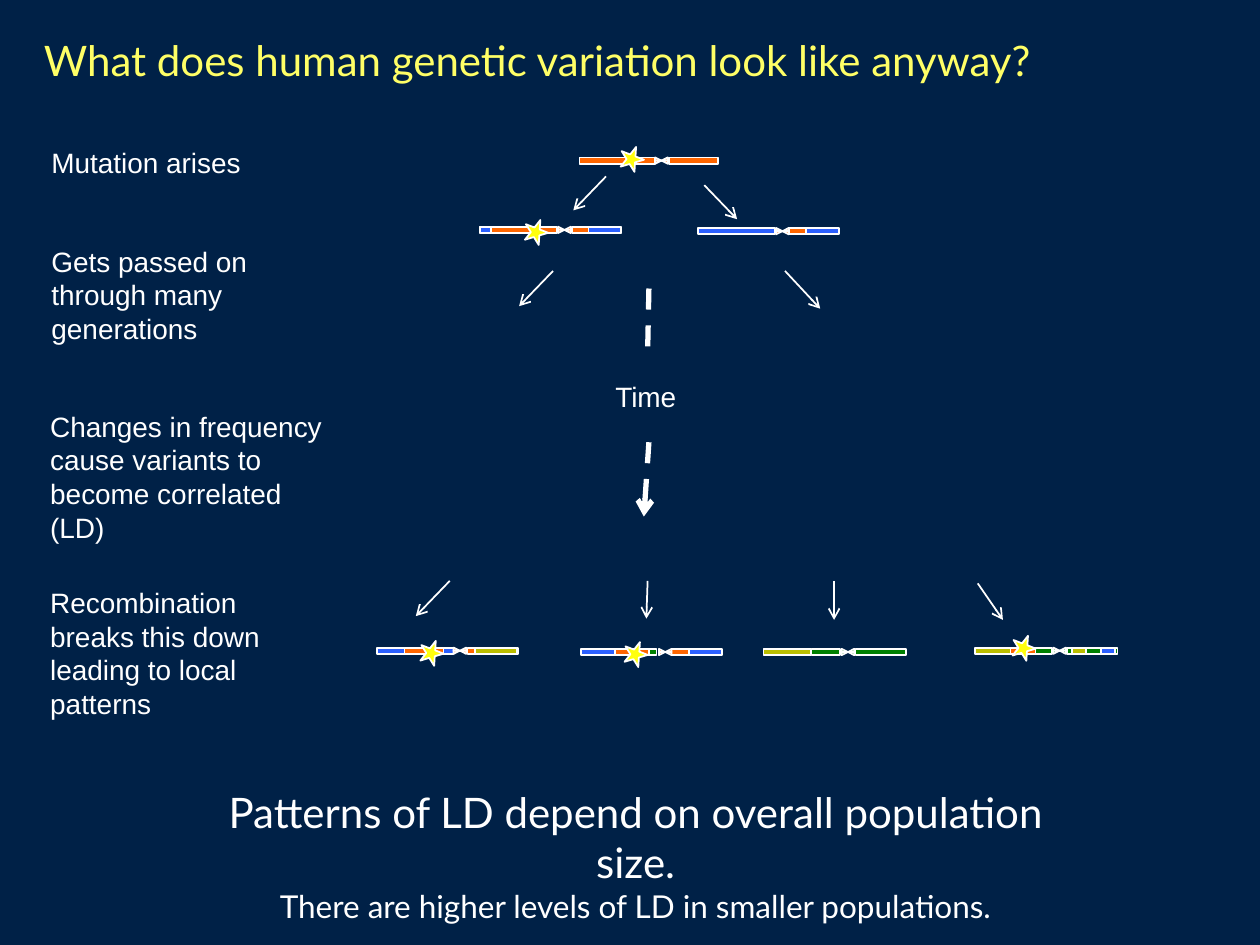
from lxml import etree
from pptx import Presentation
from pptx.dml.color import RGBColor
from pptx.enum.dml import MSO_LINE
from pptx.enum.shapes import MSO_CONNECTOR, MSO_SHAPE
from pptx.enum.text import MSO_ANCHOR, PP_ALIGN
from pptx.oxml.ns import qn
from pptx.util import Inches, Pt

RECT, TRIANGLE, STAR = MSO_SHAPE.RECTANGLE, MSO_SHAPE.RIGHT_TRIANGLE, MSO_SHAPE.STAR_5_POINT
STRAIGHT, DASH = MSO_CONNECTOR.STRAIGHT, MSO_LINE.DASH
LEFT, CENTER = PP_ALIGN.LEFT, PP_ALIGN.CENTER
TOP, BOTTOM = MSO_ANCHOR.TOP, MSO_ANCHOR.BOTTOM

NAVY = RGBColor(0x00, 0x21, 0x47)
WHITE = RGBColor(0xFF, 0xFF, 0xFF)
TITLE_YELLOW = RGBColor(0xFF, 0xFF, 0x66)
STAR_YELLOW = RGBColor(0xFF, 0xFF, 0x0D)
ORANGE = RGBColor(0xFF, 0x66, 0x00)
BLUE = RGBColor(0x2C, 0x60, 0xFF)
GREEN = RGBColor(0x00, 0x80, 0x00)
OLIVE = RGBColor(0xBB, 0xBE, 0x00)

# Content: lengths in inches
TITLE = "What does human genetic variation look like anyway?"
STEPS = [  # text, left, top, width, height, wrap
    ("Mutation arises", 0.31, 1.11, 1.72, 0.37, False),
    ("Gets passed on through many generations", 0.31, 1.89, 2.38, 0.91, True),
    ("Changes in frequency cause variants to become correlated (LD)", 0.3, 3.2, 2.38, 1.18, True),
    ("Recombination breaks this down leading to local patterns", 0.3, 4.6, 2.38, 1.18, True),
]
CONCLUSION = [("Patterns of LD depend on overall population size.", 24),
              ("There are higher levels of LD in smaller populations.", 18)]

# top, centromere x, centromere colour, segments (left, width, colour), mutation (left, top)
CHROMOSOMES = [
    (1.25, 5.25, ORANGE, [(4.6, 0.6, ORANGE), (5.31, 0.39, ORANGE)], (4.92, 1.16)),
    (1.8, 4.48, ORANGE, [(3.81, 0.61, ORANGE), (4.54, 0.39, ORANGE), (4.67, 0.26, BLUE),
                         (3.81, 0.09, BLUE)], (4.16, 1.74)),
    (1.81, 6.21, ORANGE, [(6.26, 0.39, ORANGE), (6.4, 0.26, BLUE), (5.54, 0.61, BLUE)], None),
    (5.14, 3.65, ORANGE, [(2.99, 0.61, BLUE), (3.71, 0.39, ORANGE), (3.21, 0.31, ORANGE),
                          (3.85, 0.26, BLUE), (3.77, 0.33, OLIVE)], (3.33, 5.08)),
    (5.15, 5.28, ORANGE, [(5.04, 0.17, GREEN), (4.88, 0.27, ORANGE), (5.33, 0.39, ORANGE),
                          (5.47, 0.26, BLUE), (4.61, 0.27, BLUE)], (4.95, 5.09)),
    (5.15, 6.73, GREEN, [(6.06, 0.38, OLIVE), (6.44, 0.23, GREEN), (6.79, 0.4, GREEN)], None),
    (5.14, 8.41, GREEN, [(7.74, 0.38, OLIVE), (8.12, 0.23, GREEN), (8.47, 0.4, GREEN),
                         (8.02, 0.2, ORANGE), (8.51, 0.11, OLIVE), (8.74, 0.11, BLUE)],
     (8.03, 5.04)),
]
DESCENT = [  # from x, y to x, y
    (4.81, 1.4, 4.55, 1.67), (5.59, 1.47, 5.85, 1.74),
    (4.39, 2.15, 4.12, 2.43), (6.23, 2.15, 6.51, 2.45),
    (3.57, 4.61, 3.3, 4.89), (5.14, 4.61, 5.13, 4.91),
    (6.62, 4.61, 6.62, 4.92), (7.76, 4.63, 7.96, 4.92),
]
BAR_H = 0.05
ARM_W = 0.05
STAR_SIZE = 0.19


def add_text(s, paragraphs, box, font="Arial", color=WHITE, align=LEFT, anchor=TOP, wrap=True):
    tf = s.shapes.add_textbox(*map(Inches, box)).text_frame
    tf.word_wrap = wrap
    tf.vertical_anchor = anchor
    for i, (text, size) in enumerate(paragraphs):
        p = tf.add_paragraph() if i else tf.paragraphs[0]
        p.alignment = align
        r = p.add_run()
        r.text = text
        r.font.name, r.font.size, r.font.color.rgb = font, Pt(size), color


def add_piece(shapes, kind, box, color):
    sp = shapes.add_shape(kind, *map(Inches, box))
    sp.shadow.inherit = False
    sp.fill.solid()
    sp.fill.fore_color.rgb = color
    sp.line.color.rgb = WHITE
    sp.line.width = Pt(1)
    return sp


def add_chromosome(s, top, center, color, segments, mutation):
    shapes = s.shapes.add_group_shape().shapes
    for left, width, fill in segments:
        add_piece(shapes, RECT, (left, top, width, BAR_H), fill)
    # Four mirrored triangles pinch together at the centromere
    for flip_h in (False, True):
        for flip_v in (False, True):
            box = (center if flip_h else center - ARM_W,
                   top + BAR_H / 2 if flip_v else top, ARM_W, BAR_H / 2)
            xfrm = add_piece(shapes, TRIANGLE, box, color).element.spPr.find(qn("a:xfrm"))
            xfrm.set("flipH", str(int(flip_h)))
            xfrm.set("flipV", str(int(flip_v)))
    if mutation:
        star = add_piece(s.shapes, STAR, (*mutation, STAR_SIZE, STAR_SIZE), STAR_YELLOW)
        star.rotation = 21


def add_line(s, ends, width=1, dash=None, arrow=True):
    cn = s.shapes.add_connector(STRAIGHT, *map(Inches, ends))
    cn.line.color.rgb = WHITE
    cn.line.width = Pt(width)
    if dash:
        cn.line.dash_style = dash
    spPr = cn.element.spPr
    if arrow:
        etree.SubElement(spPr.find(qn("a:ln")), qn("a:tailEnd"), type="arrow")
    etree.SubElement(spPr, qn("a:effectLst"))


prs = Presentation()
prs.slide_width, prs.slide_height = Inches(10), Inches(7.5)
s = prs.slides.add_slide(prs.slide_layouts[6])
s.background.fill.solid()
s.background.fill.fore_color.rgb = NAVY

# Title, steps and conclusion
add_text(s, [(TITLE, 24)], (0.25, 0.06, 9.53, 0.66), font="Lato", color=TITLE_YELLOW,
         anchor=BOTTOM)
for text, *box, wrap in STEPS:
    add_text(s, [(text, 16)], box, wrap=wrap)
add_text(s, CONCLUSION, (1.56, 6.19, 6.97, 0.81), font="Lato", align=CENTER)

# Chromosomes and lines of descent
for chromosome in CHROMOSOMES:
    add_chromosome(s, *chromosome)
for ends in DESCENT:
    add_line(s, ends)

# Time axis
add_text(s, [("Time", 16)], (4.78, 2.96, 0.69, 0.37), align=CENTER, wrap=False)
add_line(s, (5.15, 2.29, 5.14, 2.8), width=3, dash=DASH, arrow=False)
add_line(s, (5.15, 3.51, 5.11, 4.1), width=3, dash=DASH)

prs.save("out.pptx")
